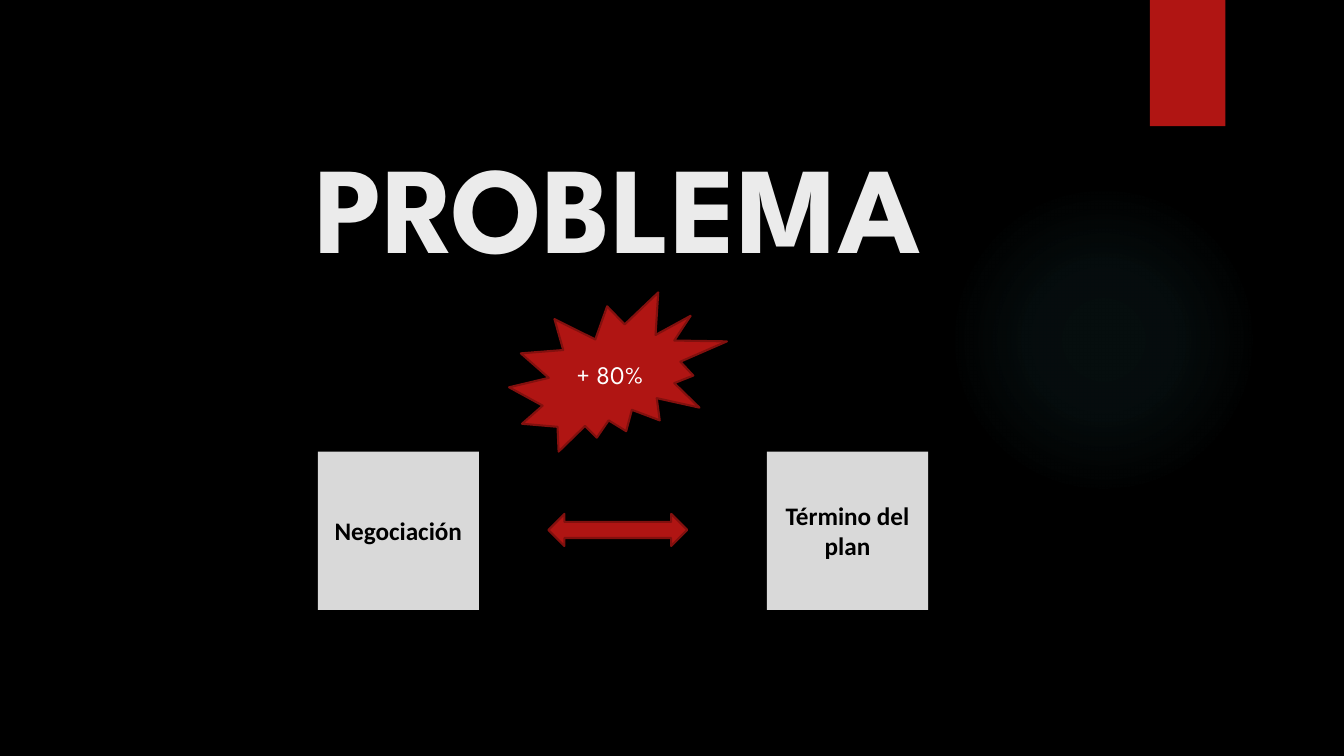
"""Build the PROBLEMA slide: two stages, the arrow between them and a burst."""
import pptx
import pptx.util
import pptx.dml.color
import pptx.enum.shapes
import pptx.enum.text
import pptx.oxml
import pptx.oxml.ns

Cm, Pt = pptx.util.Cm, pptx.util.Pt
KIND = pptx.enum.shapes.MSO_SHAPE
SIZE = (33.87, 19.05)
RED, EDGE, GREY = "B01513", "82100E", "D9D9D9"

TITLE = ("PROBLEMA", (2.51, 3.2, 26.14, 3.89))
HEAD = {"name": "League Spartan", "size": Pt(88), "bold": True}
STAGE = {"name": "Calibri", "size": Pt(18), "bold": True}
BURST = {"name": "League Spartan", "size": Pt(18), "bold": False}

GLOW = (23.9, 4.65, 7.82, 7.82)
STOPS = [(0, 7), (36, 6), (69, 0)]
TINT = "50B9C1"
BAND = (28.98, 0, 1.9, 3.18)
STAGES = ["Negociación", "Término del plan"]
LEFT, TOP, WIDE, HIGH, STEP = 8.01, 11.38, 4.06, 3.99, 11.32
ARROW = (13.82, 12.95, 3.5, 0.81)
SEAL = (12.83, 7.37, 5.49, 4.01)


def color(code):
    return pptx.dml.color.RGBColor.from_string(code)


def write(shape, text, look, ink):
    frame = shape.text_frame
    frame.word_wrap = True
    frame.vertical_anchor = pptx.enum.text.MSO_ANCHOR.MIDDLE
    para = frame.paragraphs[0]
    para.alignment = pptx.enum.text.PP_ALIGN.CENTER
    run = para.add_run()
    run.text = text
    for key, value in look.items():
        setattr(run.font, key, value)
    run.font.color.rgb = color(ink)


def draw(slide, kind, box, fill, edge=None):
    shape = slide.shapes.add_shape(kind, *map(Cm, box))
    shape.shadow.inherit = False
    shape.fill.solid()
    shape.fill.fore_color.rgb = color(fill)
    if edge:
        shape.line.color.rgb = color(edge)
        shape.line.width = Pt(1.5)
    else:
        shape.line.fill.background()
    return shape


def shine(shape):
    stops = "".join(
        f'<a:gs pos="{pos * 1000}"><a:srgbClr val="{TINT}">'
        f'<a:alpha val="{alpha * 1000}"/></a:srgbClr></a:gs>'
        for pos, alpha in STOPS)
    grad = pptx.oxml.parse_xml(
        f'<a:gradFill {pptx.oxml.ns.nsdecls("a")}><a:gsLst>{stops}</a:gsLst>'
        '<a:path path="circle"><a:fillToRect l="50000" t="50000" '
        'r="50000" b="50000"/></a:path></a:gradFill>')
    props = shape._element.spPr
    solid = props.find(pptx.oxml.ns.qn("a:solidFill"))
    props.replace(solid, grad)


def main():
    deck = pptx.Presentation()
    deck.slide_width, deck.slide_height = map(Cm, SIZE)
    slide = deck.slides.add_slide(deck.slide_layouts[5])
    slide.background.fill.solid()
    slide.background.fill.fore_color.rgb = color("000000")

    shine(draw(slide, KIND.OVAL, GLOW, TINT))
    draw(slide, KIND.RECTANGLE, BAND, RED)

    text, box = TITLE
    title = slide.shapes.title
    title.left, title.top, title.width, title.height = map(Cm, box)
    write(title, text, HEAD, "EBEBEB")
    slide.shapes._spTree.append(title._element)

    for num, name in enumerate(STAGES):
        place = (LEFT + num * STEP, TOP, WIDE, HIGH)
        write(draw(slide, KIND.RECTANGLE, place, GREY), name, STAGE, "000000")

    draw(slide, KIND.LEFT_RIGHT_ARROW, ARROW, RED, EDGE)
    seal = draw(slide, KIND.EXPLOSION2, SEAL, RED, EDGE)
    write(seal, "+ 80%", BURST, "FFFFFF")
    deck.save("out.pptx")


if __name__ == "__main__":
    main()
